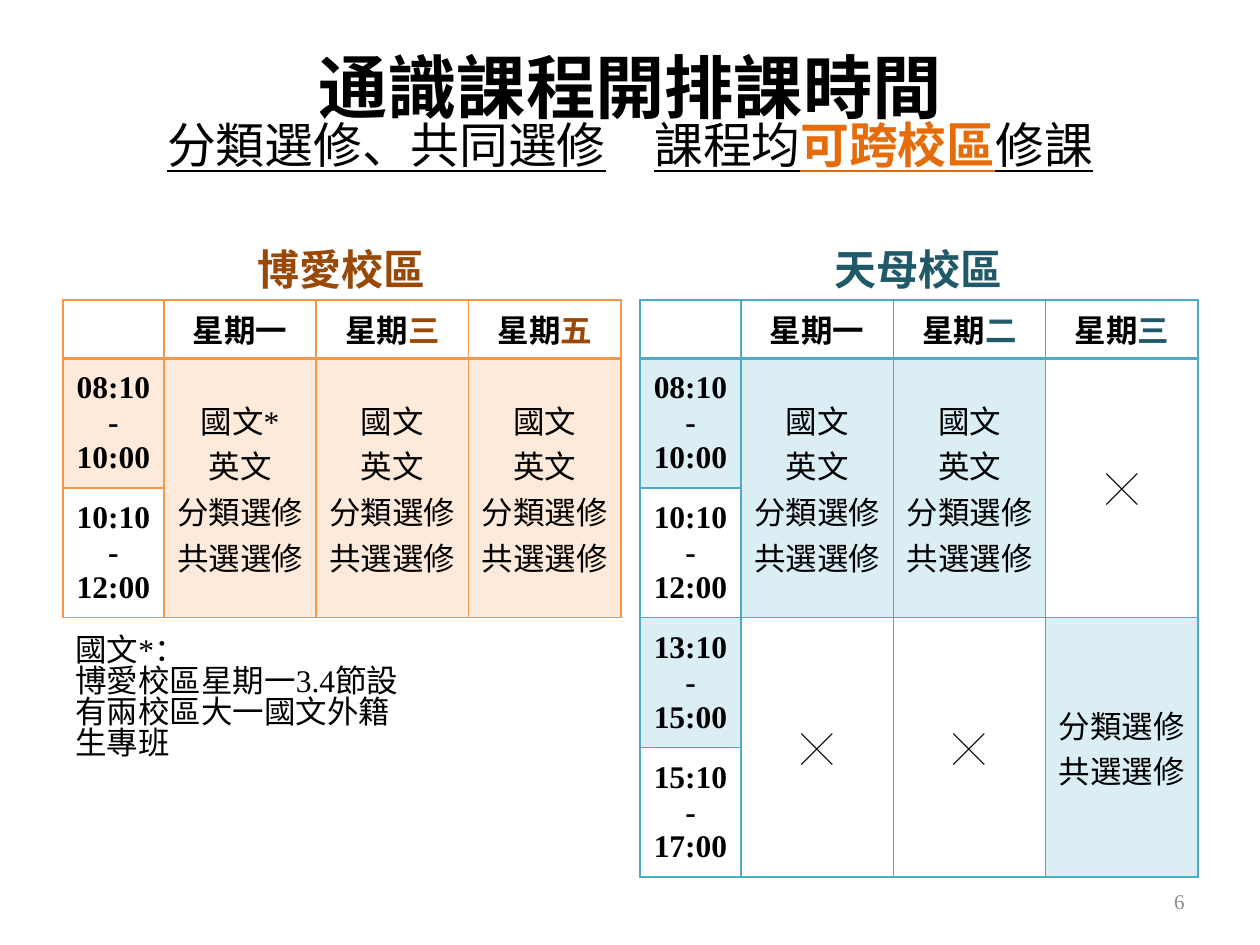
from lxml import etree
from pptx import Presentation
from pptx.dml.color import RGBColor
from pptx.enum.text import MSO_ANCHOR, PP_ALIGN
from pptx.oxml.ns import qn
from pptx.util import Inches, Pt

CENTER, LEFT, RIGHT = PP_ALIGN.CENTER, PP_ALIGN.LEFT, PP_ALIGN.RIGHT
MIDDLE, BOTTOM = MSO_ANCHOR.MIDDLE, MSO_ANCHOR.BOTTOM
COMPARISON_LAYOUT = 4
SERIF, SANS = "Times New Roman", "Noto Sans CJK SC"
COLORS = {
    "black": "000000", "highlight": "E46C0A", "gray": "8C8C8C",
    "brown": "984807", "orange": "F79646", "light_orange": "FDEADA",
    "teal": "215968", "blue": "4BACC6", "light_blue": "DBEEF4",
}

TITLE = "通識課程開排課時間"
SUBTITLE = [
    ("分類選修、共同選修", {"underline": True}),
    ("\u3000", {}),
    ("課程均", {"underline": True}),
    ("可跨校區", {"underline": True, "bold": True, "color": "highlight"}),
    ("修課", {"underline": True}),
]
NOTE = ["國文*：", "博愛校區星期一3.4節設有兩校區大一國文外籍生專班"]
PAGE_NUMBER = "6"

ELECTIVES = ["分類選修", "共選選修"]
ALL_COURSES = ["國文", "英文"] + ELECTIVES
CLOSED = ["╳"]
CAMPUSES = [
    {
        "name": "博愛校區", "placeholder": 1, "left": 0.5,
        "accent": "brown", "line": "orange", "tint": "light_orange",
        "days": [("一", "black"), ("三", "brown"), ("五", "brown")],
        "times": ["08:10-10:00", "10:10-12:00"],
        "blocks": [[["國文*", "英文"] + ELECTIVES, ALL_COURSES, ALL_COURSES]],
    },
    {
        "name": "天母校區", "placeholder": 3, "left": 5.08,
        "accent": "teal", "line": "blue", "tint": "light_blue",
        "days": [("一", "black"), ("二", "teal"), ("三", "teal")],
        "times": ["08:10-10:00", "10:10-12:00", "13:10-15:00", "15:10-17:00"],
        "blocks": [[ALL_COURSES, ALL_COURSES, CLOSED], [CLOSED, CLOSED, ELECTIVES]],
    },
]
COLUMN_WIDTHS = [0.8, 1.21, 1.21, 1.21]
TABLE_TOP, TABLE_WIDTH = 2.38, 4.42
HEADER_HEIGHT, ROW_HEIGHT = 0.46, 1.03


def rgb(name):
    return RGBColor.from_string(COLORS[name])


def add_run(paragraph, text, size=18, font=SERIF, color="black", bold=False, underline=False):
    run = paragraph.add_run()
    run.text = text
    run.font.size = Pt(size)
    run.font.name = font
    run.font.bold = bold
    run.font.underline = underline
    run.font.color.rgb = rgb(color)
    east_asian = etree.SubElement(run.font._element, qn("a:ea"))
    east_asian.set("typeface", SANS)


def add_lines(paragraph, lines, **style):
    for index, line in enumerate(lines):
        if index:
            paragraph.add_line_break()
        add_run(paragraph, line, **style)


def place(shape, left, top, width, height):
    shape.left, shape.top = Inches(left), Inches(top)
    shape.width, shape.height = Inches(width), Inches(height)


def first_paragraph(text_frame, alignment, anchor):
    text_frame.word_wrap = True
    text_frame.vertical_anchor = anchor
    paragraph = text_frame.paragraphs[0]
    paragraph.alignment = alignment
    return paragraph


def add_text_box(slide, box, alignment, anchor):
    shape = slide.shapes.add_textbox(*(Inches(length) for length in box))
    return first_paragraph(shape.text_frame, alignment, anchor)


def set_borders(cell, color, bottom_width):
    properties = cell._tc.get_or_add_tcPr()
    for side, width in (("L", 1), ("R", 1), ("T", 1), ("B", bottom_width)):
        line = etree.SubElement(properties, qn(f"a:ln{side}"), w=str(Pt(width)))
        fill = etree.SubElement(line, qn("a:solidFill"))
        etree.SubElement(fill, qn("a:srgbClr"), val=COLORS[color])


def cell_paragraph(cell):
    cell.vertical_anchor = MIDDLE
    paragraph = cell.text_frame.paragraphs[0]
    paragraph.alignment = CENTER
    return paragraph


def tint_cell(cell, campus):
    cell.fill.solid()
    cell.fill.fore_color.rgb = rgb(campus["tint"])


def add_timetable(slide, campus):
    row_count = len(campus["times"]) + 1
    height = HEADER_HEIGHT + ROW_HEIGHT * len(campus["times"])
    table = slide.shapes.add_table(
        row_count, len(COLUMN_WIDTHS), Inches(campus["left"]), Inches(TABLE_TOP),
        Inches(TABLE_WIDTH), Inches(height)).table
    table.first_row = table.horz_banding = False
    for column, width in zip(table.columns, COLUMN_WIDTHS):
        column.width = Inches(width)
    for row_index, row in enumerate(table.rows):
        row.height = Inches(ROW_HEIGHT if row_index else HEADER_HEIGHT)
        for cell in row.cells:
            set_borders(cell, campus["line"], 1 if row_index else 2)
            cell.fill.background()

    for column_index, (day, color) in enumerate(campus["days"], 1):
        paragraph = cell_paragraph(table.cell(0, column_index))
        add_run(paragraph, "星期", bold=True)
        add_run(paragraph, day, color=color, bold=True)
    for row_index, time in enumerate(campus["times"], 1):
        cell = table.cell(row_index, 0)
        add_run(cell_paragraph(cell), time, bold=True)
        if row_index % 2:
            tint_cell(cell, campus)
    for block_index, block in enumerate(campus["blocks"]):
        row_index = 1 + 2 * block_index
        for column_index, courses in enumerate(block, 1):
            cell = table.cell(row_index, column_index)
            cell.merge(table.cell(row_index + 1, column_index))
            closed = courses == CLOSED
            add_lines(cell_paragraph(cell), courses, font=SANS if closed else SERIF)
            if not closed:
                tint_cell(cell, campus)


def main():
    presentation = Presentation()
    presentation.slide_width, presentation.slide_height = Inches(10), Inches(7.5)
    slide = presentation.slides.add_slide(presentation.slide_layouts[COMPARISON_LAYOUT])
    placeholders = {shape.placeholder_format.idx: shape for shape in slide.placeholders}

    title = placeholders[0]
    place(title, 0.5, 0.3, 9, 1.25)
    paragraph = first_paragraph(title.text_frame, CENTER, MIDDLE)
    paragraph.line_spacing = 0.8
    add_run(paragraph, TITLE, size=39.6, font=SANS, bold=True)
    paragraph.add_line_break()
    for text, style in SUBTITLE:
        add_run(paragraph, text, size=27.9, font=SANS, **style)

    for campus in CAMPUSES:
        heading = placeholders[campus["placeholder"]]
        place(heading, campus["left"], 1.68, TABLE_WIDTH, 0.7)
        paragraph = first_paragraph(heading.text_frame, CENTER, BOTTOM)
        add_run(paragraph, campus["name"], size=24, color=campus["accent"], bold=True)
        add_timetable(slide, campus)
    for index in (2, 4):
        element = placeholders[index]._element
        element.getparent().remove(element)

    paragraph = add_text_box(slide, (0.5, 5, 2.77, 1.31), LEFT, MSO_ANCHOR.TOP)
    paragraph.line_spacing = 0.82
    add_lines(paragraph, NOTE)
    paragraph = add_text_box(slide, (7.17, 6.95, 2.33, 0.4), RIGHT, MIDDLE)
    add_run(paragraph, PAGE_NUMBER, size=12, color="gray")

    presentation.save("out.pptx")


if __name__ == "__main__":
    main()
